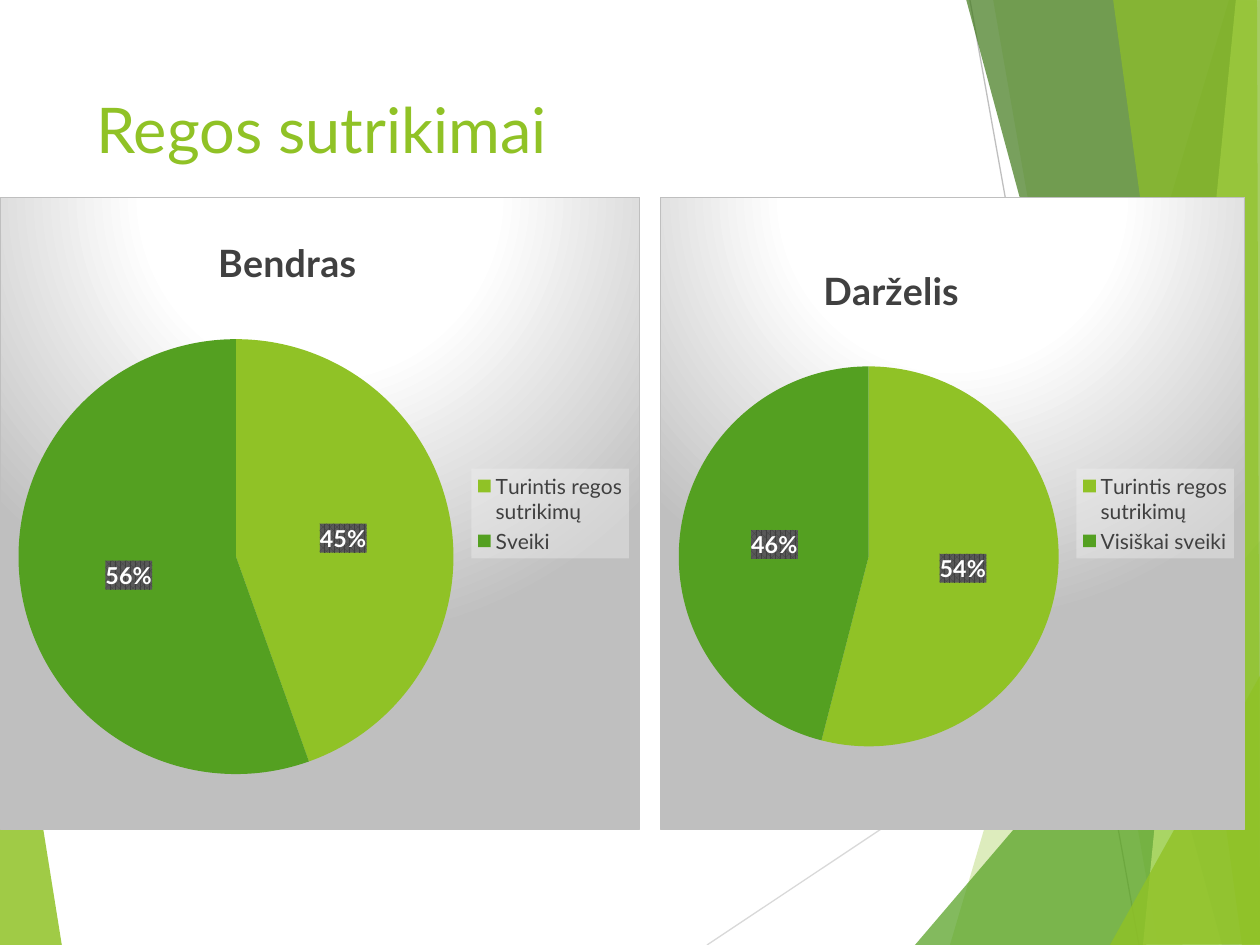
from lxml import etree
from pptx import Presentation
from pptx import util as u
from pptx.chart.data import CategoryChartData
from pptx.dml.color import RGBColor
from pptx.enum import chart as ch, shapes
from pptx.oxml import parse_xml
from pptx.oxml.ns import nsdecls, qn

PX = 914400 / 126
WIDTH, HEIGHT = 1260, 945
LIME, GREEN, DARK, PALE, INK = "90C226", "54A021", "3F7819", "C0E474", "404040"
rgb = RGBColor.from_string


def paint(fill, colour, opacity=100):
    fill.solid()
    fill.fore_color.rgb = rgb(colour)
    if opacity < 100:
        clr = fill._xPr.find(qn("a:solidFill"))[0]
        etree.SubElement(clr, qn("a:alpha"), val=str(opacity * 1000))


def place(part, index, inner, **fractions):
    """Give a chart part a manual layout, in fractions of the chart."""
    for old in part.findall(qn("c:layout")):
        part.remove(old)
    modes = {"layoutTarget": "inner"} if inner else {}
    modes |= {"xMode": "edge", "yMode": "edge"}
    items = "".join(f'<c:{k} val="{v}"/>' for k, v in (modes | fractions).items())
    part.insert(index, parse_xml(
        f'<c:layout {nsdecls("c")}><c:manualLayout>{items}</c:manualLayout></c:layout>'))


prs = Presentation()
prs.slide_width, prs.slide_height = round(WIDTH * PX), round(HEIGHT * PX)
slide = prs.slides.add_slide(prs.slide_layouts[6])

# Background facets and thin lines
rays = [((707, 945), (1261, 576), "D9D9D9"), ((970, 0), (1139, 945), "BFBFBF")]
facets = [
    ([(-1, 553), (62, 946), (-1, 945)], LIME, 85),
    ([(1229, 0), (950, 945), (1262, 946), (1261, 1)], LIME, 30),
    ([(993, -1), (1158, 945), (1261, 945), (1261, -1)], LIME, 20),
    ([(915, 945), (1260, 541), (1261, 945)], GREEN, 72),
    ([(966, -1), (1222, 945), (1261, 944), (1261, -1)], DARK, 70),
    ([(1236, -1), (1143, 945), (1261, 945), (1260, -1)], PALE, 70),
    ([(1113, -1), (1242, 945), (1260, 945), (1257, -1)], LIME, 65),
    ([(1110, 945), (1261, 674), (1261, 944)], LIME, 80),
]
for start, end, colour in rays:
    ray = slide.shapes.add_connector(
        shapes.MSO_CONNECTOR.STRAIGHT, *(round(v * PX) for v in start + end))
    ray.line.color.rgb = rgb(colour)
    ray.line.width = u.Pt(0.75)
    etree.SubElement(ray._element.spPr, qn("a:effectLst"))
for corners, colour, opacity in facets:
    builder = slide.shapes.build_freeform(*corners[0], scale=PX)
    builder.add_line_segments(corners[1:], close=True)
    facet = builder.convert_to_shape()
    facet.shadow.inherit = False
    facet.line.fill.background()
    paint(facet.fill, colour, opacity)

# Heading
heading = slide.shapes.add_textbox(*(round(v * PX) for v in (84, 84, 874, 181)))
heading.text_frame.word_wrap = True
run = heading.text_frame.paragraphs[0].add_run()
run.text = "Regos sutrikimai"
for key, value in {"name": "Lato", "size": u.Pt(36)}.items():
    setattr(run.font, key, value)
run.font.color.rgb = rgb(LIME)

# Pies: title, healthy label, values, left, width, title corner, pie corner and size
CHART_TOP, CHART_HEIGHT = 197, 633
pies = [
    ("Bendras", "Sveiki", (45, 56), 0, 640, (211, 31), (18, 142, 436)),
    ("Darželis", "Visiškai sveiki", (54, 46), 660, 585, (156, 59), (18, 169, 381)),
]
backdrop = f"""<c:spPr {nsdecls("c", "a")}><a:gradFill><a:gsLst>
<a:gs pos="0"><a:srgbClr val="FFFFFF"/></a:gs><a:gs pos="39000"><a:srgbClr val="FFFFFF"/></a:gs>
<a:gs pos="100000"><a:srgbClr val="BFBFBF"/></a:gs></a:gsLst>
<a:path path="circle"><a:fillToRect l="50000" t="-80000" r="50000" b="180000"/></a:path>
</a:gradFill><a:ln w="9525"><a:solidFill><a:srgbClr val="BFBFBF"/></a:solidFill></a:ln></c:spPr>"""
label_box = f"""<c:spPr {nsdecls("c", "a")}><a:pattFill prst="pct75">
<a:fgClr><a:srgbClr val="404040"/></a:fgClr><a:bgClr><a:srgbClr val="595959"/></a:bgClr>
</a:pattFill></c:spPr>"""
legend_box = f"""<c:spPr {nsdecls("c", "a")}><a:solidFill><a:srgbClr val="F2F2F2">
<a:alpha val="39000"/></a:srgbClr></a:solidFill></c:spPr>"""

for title, healthy, values, left, width, (title_x, title_y), (pie_x, pie_y, size) in pies:
    data = CategoryChartData()
    data.categories = ["Turintis regos sutrikimų", healthy]
    data.add_series("Series 1", values)
    box = (round(v * PX) for v in (left, CHART_TOP, width, CHART_HEIGHT))
    chart = slide.shapes.add_chart(ch.XL_CHART_TYPE.PIE, *box, data).chart
    chart.font.name, chart.font.size = "Lato", u.Pt(10)
    chart._chartSpace.chart.addnext(parse_xml(backdrop))

    chart.has_title = chart.has_legend = True
    chart.chart_title.include_in_layout = True
    chart.chart_title.text_frame.text = title
    title_font = chart.chart_title.text_frame.paragraphs[0].runs[0].font
    place(chart.chart_title._element, 1, False,
          x=round(title_x / width, 3), y=round(title_y / CHART_HEIGHT, 3))

    plot = chart.plots[0]
    plot.vary_by_categories = True
    place(chart._chartSpace.chart.plotArea, 0, True,
          x=round(pie_x / width, 3), y=round(pie_y / CHART_HEIGHT, 3),
          w=round(size / width, 3), h=round(size / CHART_HEIGHT, 3))
    for i, colour in enumerate((LIME, GREEN)):
        slice_format = plot.series[0].points[i].format
        paint(slice_format.fill, colour)
        slice_format.line.fill.background()

    plot.has_data_labels = True
    labels = plot.data_labels
    for key, value in {"number_format": '0"%"', "number_format_is_linked": False,
                       "show_value": True, "show_percentage": False,
                       "position": ch.XL_LABEL_POSITION.CENTER}.items():
        setattr(labels, key, value)

    legend = chart.legend
    legend.position = ch.XL_LEGEND_POSITION.RIGHT
    legend.include_in_layout = False

    for font, points, bold, colour in ((title_font, 21.6, True, INK),
                                       (labels.font, 13.3, True, "FFFFFF"),
                                       (legend.font, 12, False, INK)):
        for key, value in {"name": "Lato", "size": u.Pt(points), "bold": bold}.items():
            setattr(font, key, value)
        font.color.rgb = rgb(colour)
    for part, box_xml in ((labels, label_box), (legend, legend_box)):
        part._element.find(qn("c:txPr")).addprevious(parse_xml(box_xml))

prs.save("out.pptx")
